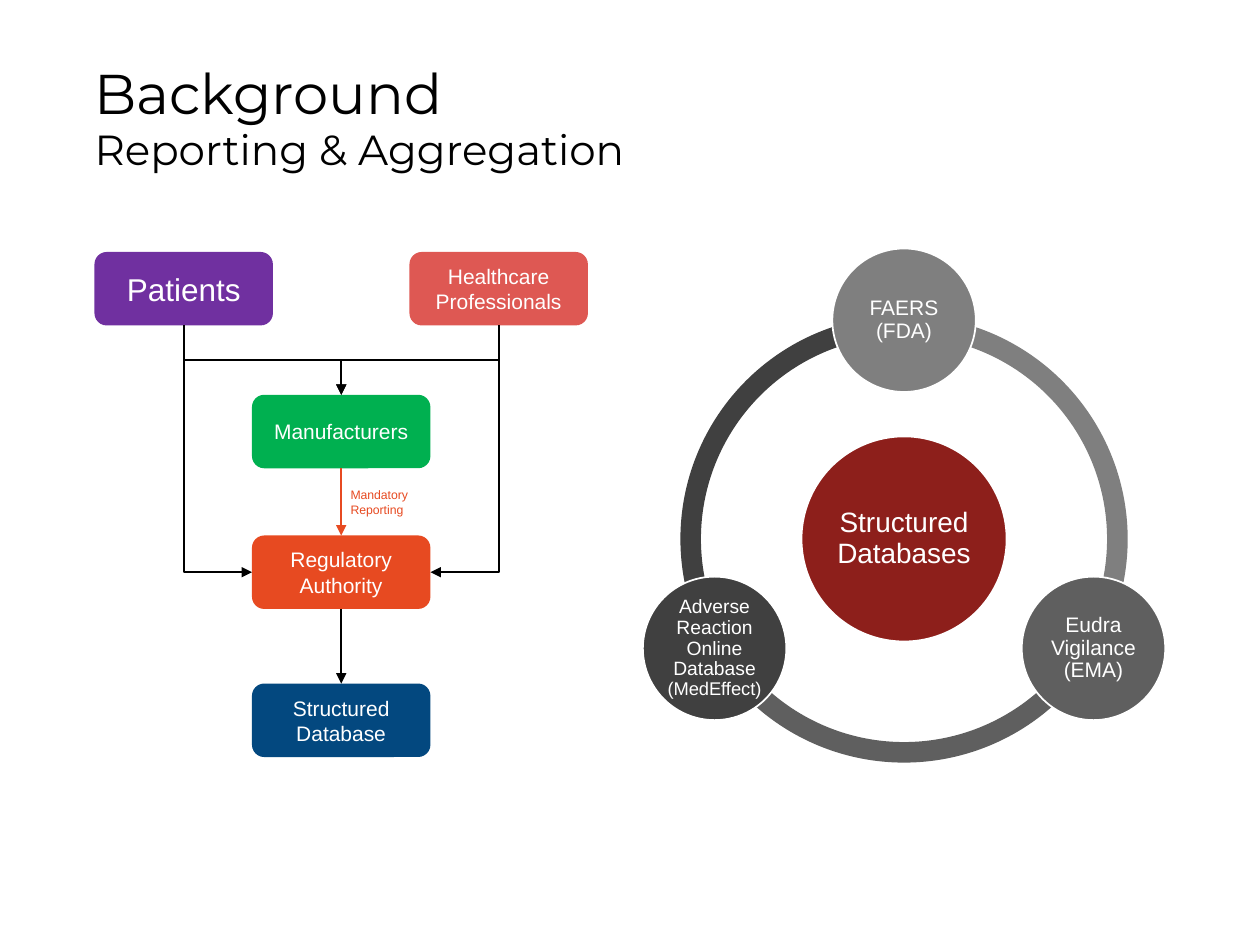
import math

import pptx
import pptx.dml.color
import pptx.enum.shapes
import pptx.enum.text
import pptx.oxml.ns
import pptx.oxml.xmlchemy
import pptx.util

Pt = pptx.util.Pt
RGBColor = pptx.dml.color.RGBColor
SHAPE = pptx.enum.shapes.MSO_SHAPE
CONNECTOR = pptx.enum.shapes.MSO_CONNECTOR
ANCHOR = pptx.enum.text.MSO_ANCHOR
ALIGN = pptx.enum.text.PP_ALIGN
OxmlElement = pptx.oxml.xmlchemy.OxmlElement
qn = pptx.oxml.ns.qn

BLACK = RGBColor(0x00, 0x00, 0x00)
WHITE = RGBColor(0xFF, 0xFF, 0xFF)
PURPLE = RGBColor(0x70, 0x30, 0xA0)
CORAL = RGBColor(0xDE, 0x58, 0x53)
GREEN = RGBColor(0x00, 0xB0, 0x50)
ORANGE = RGBColor(0xE7, 0x4A, 0x21)
NAVY = RGBColor(0x03, 0x48, 0x7F)
MAROON = RGBColor(0x8D, 0x1F, 0x1B)
LIGHT_GREY = RGBColor(0x7F, 0x7F, 0x7F)
MID_GREY = RGBColor(0x5F, 0x5F, 0x5F)
DARK_GREY = RGBColor(0x40, 0x40, 0x40)

TOP, LEFT, BOTTOM, RIGHT = range(4)


class SlideBuilder:
    body_font = "Arial"
    title_font = "Montserrat"
    box_width, box_height = 102, 42
    line_width = 1

    def __init__(self, slide):
        self.slide = slide

    def format_runs(self, paragraph, sizes, color, font):
        for run, size in zip(paragraph.runs, sizes):
            run.font.name = font
            run.font.size = Pt(size)
            run.font.color.rgb = color

    def set_insets(self, frame, inset):
        frame.margin_left = frame.margin_right = Pt(inset)
        frame.margin_top = frame.margin_bottom = Pt(inset)

    def title(self, text, left, top, width, height, sizes):
        title = self.slide.shapes.title
        title.left, title.top = Pt(left), Pt(top)
        title.width, title.height = Pt(width), Pt(height)
        frame = title.text_frame
        frame.text = text
        frame.vertical_anchor = ANCHOR.TOP
        self.set_insets(frame, 0)
        heading = frame.paragraphs[0]
        heading.alignment = ALIGN.LEFT
        heading.line_spacing = 0.95
        self.format_runs(heading, sizes, BLACK, self.title_font)

    def shape(self, kind, left, top, width, height, fill):
        shape = self.slide.shapes.add_shape(
            kind, Pt(left), Pt(top), Pt(width), Pt(height))
        shape.shadow.inherit = False
        shape.fill.solid()
        shape.fill.fore_color.rgb = fill
        shape.line.fill.background()
        return shape

    def centred_text(self, shape, parts, sizes):
        frame = shape.text_frame
        frame.word_wrap = True
        frame.vertical_anchor = ANCHOR.MIDDLE
        paragraph = frame.paragraphs[0]
        paragraph.alignment = ALIGN.CENTER
        for part in parts:
            paragraph.add_run().text = part
        self.format_runs(paragraph, sizes, WHITE, self.body_font)
        return paragraph

    def box(self, text, left, top, fill, size=12):
        box = self.shape(SHAPE.ROUNDED_RECTANGLE, left, top,
                         self.box_width, self.box_height, fill)
        self.centred_text(box, [text], [size])
        return box

    def circle(self, parts, center_x, center_y, diameter, fill, sizes):
        circle = self.shape(SHAPE.OVAL, center_x - diameter / 2,
                            center_y - diameter / 2, diameter, diameter, fill)
        circle.line.color.rgb = WHITE
        circle.line.width = Pt(self.line_width)
        self.set_insets(circle.text_frame, 1.44)
        self.centred_text(circle, parts, sizes).line_spacing = 0.9

    def arc(self, center_x, center_y, diameter, start, end, fill):
        arc = self.shape(SHAPE.BLOCK_ARC, center_x - diameter / 2,
                         center_y - diameter / 2, diameter, diameter, fill)
        # Angles count 60000 to the degree, adjustments 100000 to the unit
        arc.adjustments[0] = start * 0.6
        arc.adjustments[1] = end * 0.6
        arc.adjustments[2] = 0.046

    def arrow(self, source, target, side=TOP, color=BLACK, kind=CONNECTOR.STRAIGHT):
        arrow = self.slide.shapes.add_connector(kind, 0, 0, 0, 0)
        arrow.begin_connect(source, BOTTOM)
        arrow.end_connect(target, side)
        arrow.line.color.rgb = color
        arrow.line.width = Pt(self.line_width)
        properties = arrow._element.spPr
        tail = OxmlElement("a:tailEnd")
        tail.set("type", "triangle")
        properties.find(qn("a:ln")).append(tail)
        properties.append(OxmlElement("a:effectLst"))
        return arrow

    def elbow(self, source, target, side, preset):
        """Elbow that leaves downwards: a quarter turn of the sideways preset."""
        elbow = self.arrow(source, target, side, kind=CONNECTOR.ELBOW)
        rightward = elbow.end_x > elbow.begin_x
        center_x = elbow.left + elbow.width // 2
        center_y = elbow.top + elbow.height // 2
        elbow.width, elbow.height = elbow.height, elbow.width
        elbow.left = center_x - elbow.width // 2
        elbow.top = center_y - elbow.height // 2
        properties = elbow._element.spPr
        turn = properties.find(qn("a:xfrm"))
        turn.set("rot", str((270 if rightward else 90) * 60000))
        turn.set("flipH", "1" if rightward else "0")
        turn.set("flipV", "0")
        properties.find(qn("a:prstGeom")).set("prst", preset)

    def label(self, lines, left, top, width, height, size, color):
        label = self.slide.shapes.add_textbox(
            Pt(left), Pt(top), Pt(width), Pt(height))
        label.text_frame.word_wrap = False
        label.text_frame.text = lines
        for paragraph in label.text_frame.paragraphs:
            self.format_runs(paragraph, [size], color, self.body_font)


def main():
    deck = pptx.Presentation()
    deck.slide_width, deck.slide_height = Pt(720), Pt(540)
    builder = SlideBuilder(deck.slides.add_slide(deck.slide_layouts[5]))
    builder.title("Background\vReporting & Aggregation", 54, 36, 612, 75.6, [32, 24])

    # Ring of databases: each arc runs clockwise from its start angle
    center_x, center_y, orbit = 516.6, 308, 125
    ring = [
        (["Adverse Reaction Online Database ", "(MedEffect)"], [11, 10.5], 150, DARK_GREY),
        (["Eudra Vigilance (EMA)"], [12], 30, MID_GREY),
        (["FAERS (FDA)"], [12], 270, LIGHT_GREY),
    ]
    for _, _, angle, fill in ring:
        builder.arc(center_x, center_y, 255.6, angle, (angle + 120) % 360, fill)
    builder.circle(["Structured Databases"], center_x, center_y, 117.2, MAROON, [16])
    for parts, sizes, angle, fill in reversed(ring):
        builder.circle(parts,
                       center_x + orbit * math.cos(math.radians(angle)),
                       center_y + orbit * math.sin(math.radians(angle)),
                       82, fill, sizes)

    # Reporting flow
    patients = builder.box("Patients", 54, 144, PURPLE, 18)
    professionals = builder.box("Healthcare Professionals", 234, 144, CORAL)
    manufacturers = builder.box("Manufacturers", 144, 225.6, GREEN)
    authority = builder.box("Regulatory Authority", 144, 306, ORANGE)
    database = builder.box("Structured Database", 144, 390.6, NAVY)

    # Arrows between the steps
    builder.arrow(manufacturers, authority, color=ORANGE)
    for reporter, side in ((patients, LEFT), (professionals, RIGHT)):
        builder.elbow(reporter, manufacturers, TOP, "bentConnector3")
        builder.elbow(reporter, authority, side, "bentConnector2")
    builder.arrow(authority, database)
    builder.label("Mandatory\nReporting", 193.2, 275, 49.7, 24.5, 7, ORANGE)

    deck.save("out.pptx")


if __name__ == "__main__":
    main()
